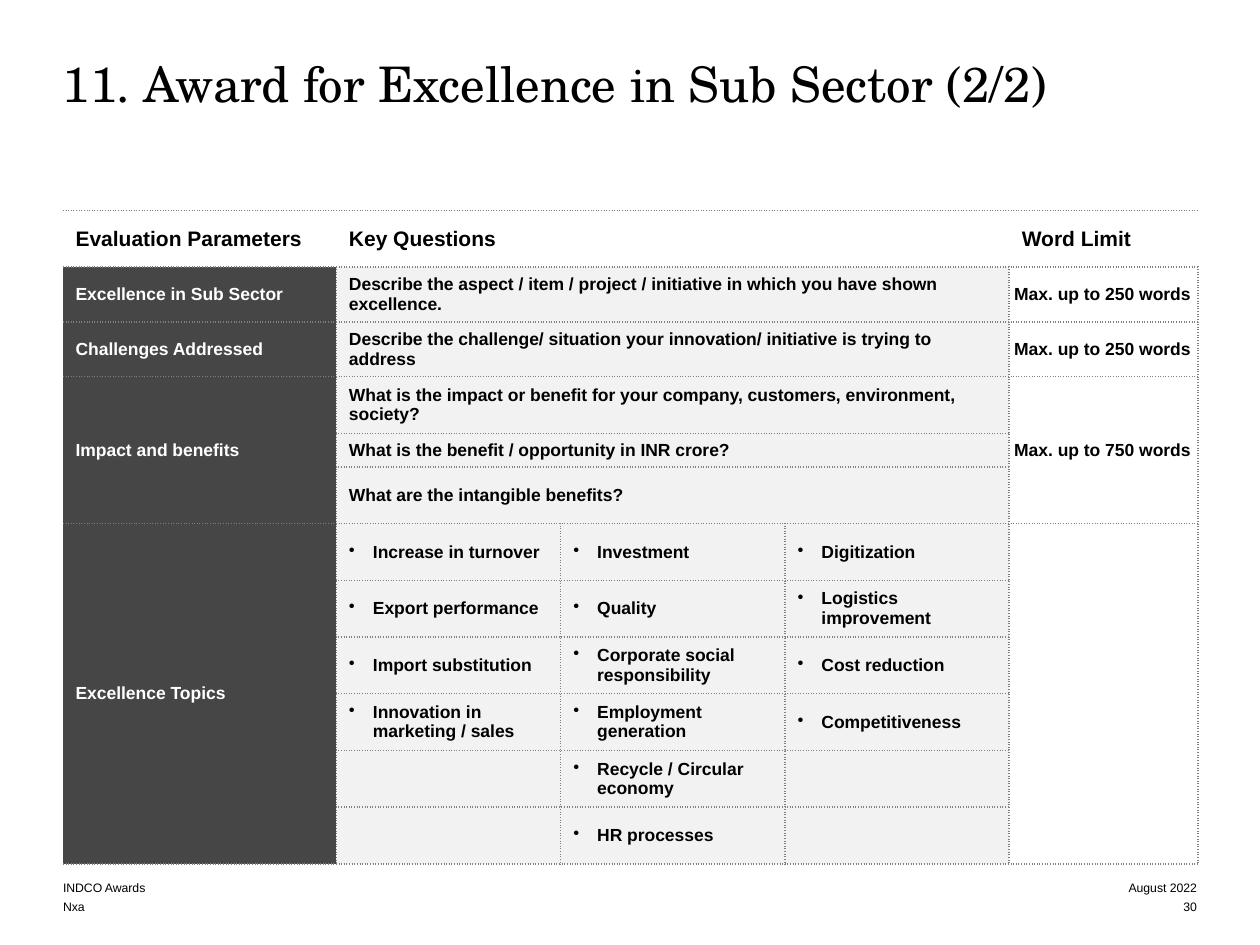
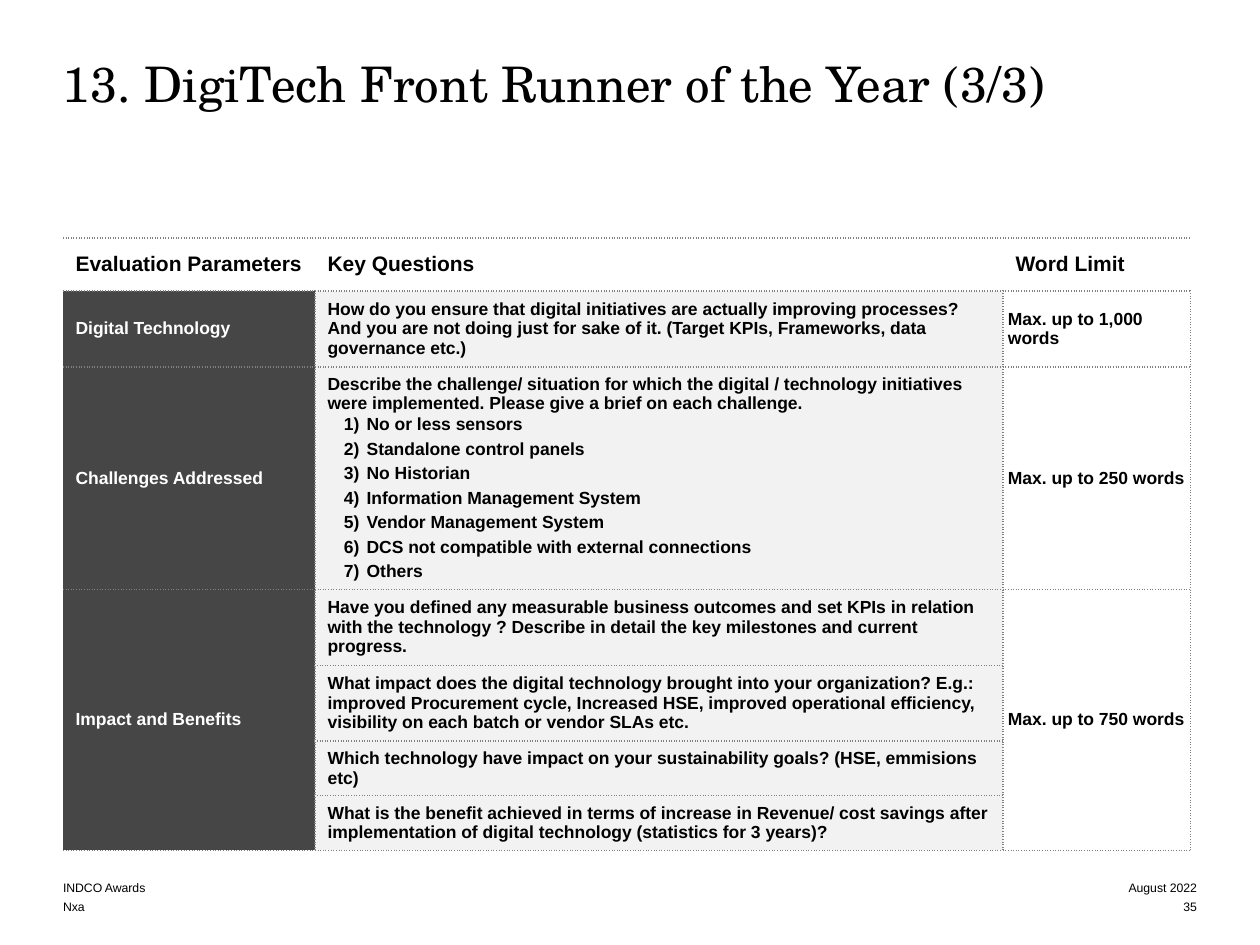
from dataclasses import dataclass

from lxml import etree
from pptx import Presentation
from pptx.dml.color import RGBColor
from pptx.enum import text
from pptx.oxml import ns
from pptx.util import Inches, Pt

HEADINGS = ("Evaluation Parameters", "Key Questions", "Word Limit")
FOOTER_LEFT = ("INDCO Awards", "Nxa")
FOOTER_DATE = "August 2022"

# Each section: parameter, rows of questions, word limit.
# A string is one question, a list is a question with numbered points,
# a tuple is a row of bulleted topics.
AWARDS = [
    dict(
        title="11. Award for Excellence in Sub Sector (2/2)",
        page="30",
        top=1.67,
        parameter_width=2.17,
        question_widths=[1.78] * 3,
        limit_width=1.5,
        row_heights=[0.45, 0.41, 0.41, 0.45, 0.26] + [0.45] * 7,
        sections=[
            ("Excellence in Sub Sector",
             ["Describe the aspect / item / project / initiative in which you "
              "have shown excellence."],
             "Max. up to 250 words"),
            ("Challenges Addressed",
             ["Describe the challenge/ situation your innovation/ initiative "
              "is trying to address"],
             "Max. up to 250 words"),
            ("Impact and benefits",
             ["What is the impact or benefit for your company, customers, "
              "environment, society?",
              "What is the benefit / opportunity in INR crore?",
              "What are the intangible benefits?"],
             "Max. up to 750 words"),
            ("Excellence Topics",
             [("Increase in turnover", "Investment", "Digitization"),
              ("Export performance", "Quality", "Logistics improvement"),
              ("Import substitution", "Corporate social responsibility",
               "Cost reduction"),
              ("Innovation in marketing / sales", "Employment generation",
               "Competitiveness"),
              ("", "Recycle / Circular economy", ""),
              ("", "HR processes", "")],
             ""),
        ],
    ),
    dict(
        title="13. DigiTech Front Runner of the Year (3/3)",
        page="35",
        top=1.89,
        parameter_width=2.0,
        question_widths=[5.46],
        limit_width=1.49,
        row_heights=[0.42, 0.56, 1.75, 0.56, 0.56, 0.41, 0.41],
        sections=[
            ("Digital Technology",
             ["How do you ensure that digital initiatives are actually "
              "improving processes? And you are not doing just for sake of "
              "it. (Target KPIs, Frameworks, data governance etc.)"],
             "Max. up to 1,000 words"),
            ("Challenges Addressed",
             [["Describe the challenge/ situation for which the digital / "
               "technology initiatives were implemented. Please give a brief "
               "on each challenge.",
               "No or less sensors",
               "Standalone control panels",
               "No Historian",
               "Information Management System",
               "Vendor Management System",
               "DCS not compatible with external connections",
               "Others"]],
             "Max. up to 250 words"),
            ("Impact and Benefits",
             ["Have you defined any measurable business outcomes and set KPIs "
              "in relation with the technology ? Describe in detail the key "
              "milestones and current progress.",
              "What impact does the digital technology brought into your "
              "organization? E.g.: improved Procurement cycle, Increased HSE, "
              "improved operational efficiency, visibility on each batch or "
              "vendor SLAs etc.",
              "Which technology have impact on your sustainability goals? "
              "(HSE, emmisions etc)",
              "What is the benefit achieved in terms of increase in Revenue/ "
              "cost savings after implementation of digital technology "
              "(statistics for 3 years)?"],
             "Max. up to 750 words"),
        ],
    ),
]


@dataclass(frozen=True)
class Theme:
    ink: str = "000000"
    paper: str = "FFFFFF"
    parameter: str = "464646"
    question: str = "F2F2F2"
    rule: str = "808080"
    title_font: str = "TeX Gyre Schola"
    body_font: str = "Arial"
    title_size: int = 28
    heading_size: int = 12
    body_size: int = 10
    footer_size: int = 7
    margin: float = 0.5
    content_width: float = 9.0


THEME = Theme()


def format_runs(paragraph, size, colour=THEME.ink, font=THEME.body_font, bold=False):
    for run in paragraph.runs:
        run.font.name = font
        run.font.size = Pt(size)
        run.font.bold = bold
        run.font.color.rgb = RGBColor.from_string(colour)


def add_text(slide, wording, left, top, width, height, size, font=THEME.body_font,
             anchor=text.MSO_ANCHOR.BOTTOM, align=text.PP_ALIGN.LEFT, spacing=None):
    box = slide.shapes.add_textbox(*map(Inches, (left, top, width, height)))
    frame = box.text_frame
    frame.word_wrap = True
    frame.vertical_anchor = anchor
    frame.margin_left = frame.margin_right = frame.margin_top = frame.margin_bottom = 0
    frame.text = wording
    paragraph = frame.paragraphs[0]
    paragraph.alignment = align
    paragraph.line_spacing = spacing
    format_runs(paragraph, size, font=font)


def add_title_and_footer(slide, title, page):
    add_text(slide, title, THEME.margin, 0.5, THEME.content_width, 1.5,
             THEME.title_size, THEME.title_font, text.MSO_ANCHOR.TOP, spacing=0.85)
    date_width = 1.4
    date_left = THEME.margin + THEME.content_width - date_width
    for line, (left_note, right_note) in enumerate(zip(FOOTER_LEFT, (FOOTER_DATE, page))):
        top = 6.95 + 0.15 * line
        add_text(slide, left_note, THEME.margin, top, 4.35, 0.15, THEME.footer_size)
        add_text(slide, right_note, date_left, top, date_width, 0.15,
                 THEME.footer_size, align=text.PP_ALIGN.RIGHT)


def add_mark(paragraph, tag, indent, hang, **attributes):
    """Give the paragraph a bullet or a number with a hanging indent."""
    properties = paragraph._p.get_or_add_pPr()
    properties.set("marL", str(Inches(indent)))
    properties.set("indent", str(-Inches(hang)))
    etree.SubElement(properties, ns.qn(f"a:{tag}"), **attributes)


def style_cell(cell, fill, sides):
    """Fill the cell and rule the named sides (L, R, T, B) with dots."""
    properties = cell._tc.get_or_add_tcPr()
    for side in "LRTB":
        line = etree.SubElement(properties, ns.qn(f"a:ln{side}"), w=str(Pt(1)))
        if side in sides:
            solid = etree.SubElement(line, ns.qn("a:solidFill"))
            etree.SubElement(solid, ns.qn("a:srgbClr"), val=THEME.rule)
            etree.SubElement(line, ns.qn("a:prstDash"), val="sysDot")
        else:
            etree.SubElement(line, ns.qn("a:noFill"))
    cell.fill.solid()
    cell.fill.fore_color.rgb = RGBColor.from_string(fill)
    cell.vertical_anchor = text.MSO_ANCHOR.MIDDLE
    # Empty cells need a small type size too, or they stretch their row.
    ending = cell.text_frame.paragraphs[0]._p
    etree.SubElement(ending, ns.qn("a:endParaRPr"), sz=str(THEME.body_size * 100))


def write_cell(cell, wording, size=THEME.body_size, colour=THEME.ink, after=None):
    if not wording:
        return
    cell.text_frame.text = wording
    for paragraph in cell.text_frame.paragraphs:
        if after:
            paragraph.space_after = Pt(after)
        format_runs(paragraph, size, colour, bold=True)


def write_numbered(cell, lines):
    write_cell(cell, "\n".join(lines))
    for paragraph in cell.text_frame.paragraphs[1:]:
        add_mark(paragraph, "buAutoNum", 0.31, 0.18, type="arabicParenR")
        paragraph.line_spacing = Pt(12)
        paragraph.space_after = Pt(2)


def write_questions(table, row, question, last):
    first_cell = table.cell(row, 1)
    if isinstance(question, tuple):
        for column, topic in enumerate(question, start=1):
            cell = table.cell(row, column)
            write_cell(cell, topic)
            if topic:
                add_mark(cell.text_frame.paragraphs[0], "buChar", 0.19, 0.19, char="•")
        return
    if last > 1:
        first_cell.merge(table.cell(row, last))
    if isinstance(question, list):
        write_numbered(first_cell, question)
    else:
        write_cell(first_cell, question)


def add_criteria_table(slide, award):
    widths = [award["parameter_width"], *award["question_widths"], award["limit_width"]]
    heights = award["row_heights"]
    limit = len(widths) - 1
    table = slide.shapes.add_table(
        len(heights), len(widths), Inches(THEME.margin), Inches(award["top"]),
        Inches(sum(widths)), Inches(sum(heights))).table
    table.first_row = table.horz_banding = False
    for column, width in zip(table.columns, widths):
        column.width = Inches(width)
    for row, height in zip(table.rows, heights):
        row.height = Inches(height)

    for row in range(len(heights)):
        for column in range(len(widths)):
            if row == 0:
                fill, sides = THEME.paper, "TB"
            elif column == 0:
                fill, sides = THEME.parameter, "RTB"
            else:
                fill = THEME.paper if column == limit else THEME.question
                sides = "LRTB"
            style_cell(table.cell(row, column), fill, sides)

    if limit > 2:
        table.cell(0, 1).merge(table.cell(0, limit - 1))
    for column, heading in zip((0, 1, limit), HEADINGS):
        write_cell(table.cell(0, column), heading, THEME.heading_size,
                   after=3 if column == limit else None)

    start = 1
    for parameter, questions, word_limit in award["sections"]:
        end = start + len(questions) - 1
        parameter_cell, limit_cell = table.cell(start, 0), table.cell(start, limit)
        if end > start:
            parameter_cell.merge(table.cell(end, 0))
            limit_cell.merge(table.cell(end, limit))
        write_cell(parameter_cell, parameter, colour=THEME.paper)
        write_cell(limit_cell, word_limit, after=3)
        limit_cell.margin_left = limit_cell.margin_right = Inches(0.04)
        limit_cell.margin_top = limit_cell.margin_bottom = Inches(0.04)
        for row, question in enumerate(questions, start):
            write_questions(table, row, question, limit - 1)
        start = end + 1


def main():
    deck = Presentation()
    deck.slide_width, deck.slide_height = Inches(10), Inches(7.5)
    for award in AWARDS:
        slide = deck.slides.add_slide(deck.slide_layouts[6])
        add_title_and_footer(slide, award["title"], award["page"])
        add_criteria_table(slide, award)
    deck.save("out.pptx")


if __name__ == "__main__":
    main()
